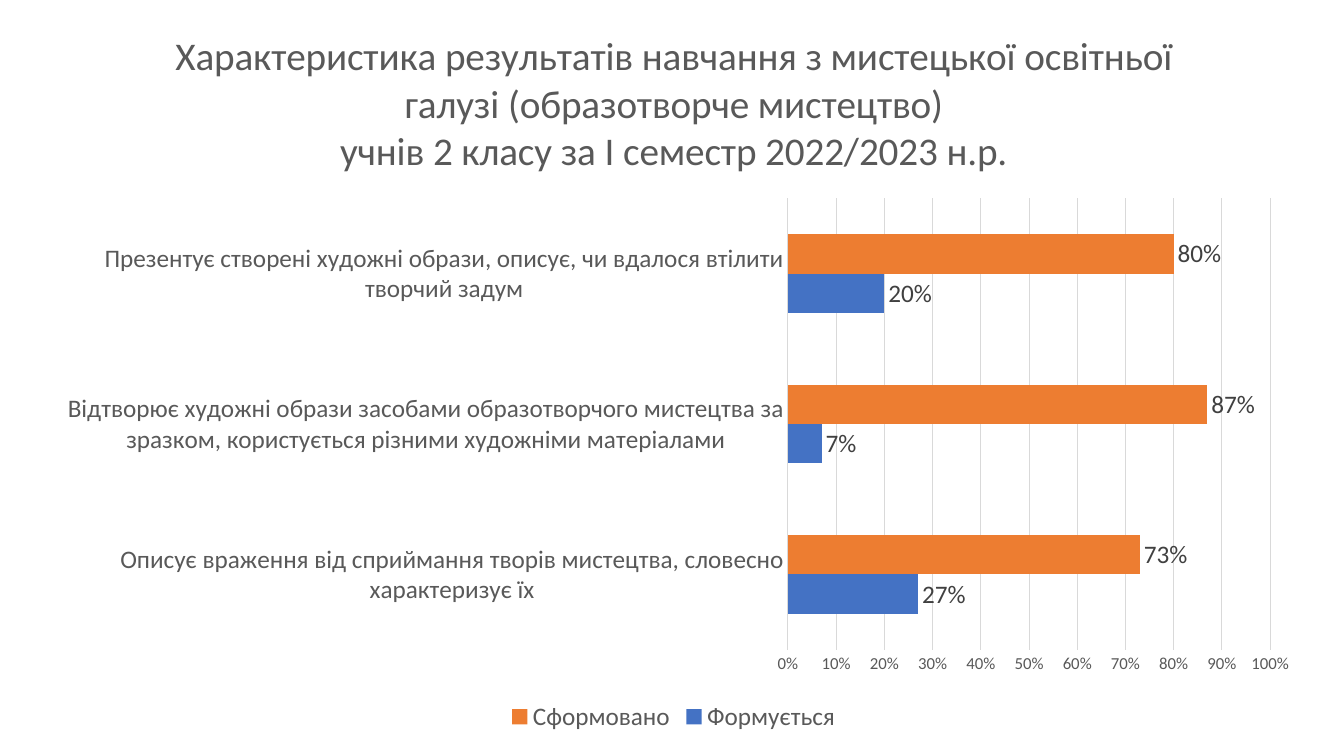
"""Build a slide with a bar chart of second-grade art learning results."""
from pptx import Presentation
from pptx.chart.data import CategoryChartData
from pptx.dml.color import RGBColor
from pptx.enum import chart as ec
from pptx.oxml import parse_xml
from pptx.oxml.ns import nsdecls
from pptx.util import Pt

COLORS = {"text": "595959", "label": "404040", "grid": "D9D9D9",
          "Формується": "4472C4", "Сформовано": "ED7D31"}
RESULTS = {"Формується": (0.27, 0.07, 0.2), "Сформовано": (0.73, 0.87, 0.8)}
TITLE = ("Характеристика результатів навчання з мистецької освітньої "
         "галузі (образотворче мистецтво)",
         "учнів 2 класу за І семестр 2022/2023 н.р.")
PLOT = {"x": 0.59, "y": 0.26, "w": 0.38, "h": 0.62}


def color(name):
    return RGBColor.from_string(COLORS[name])


def set_font(font, size, name="text"):
    font.name, font.size, font.bold = "Calibri", Pt(size), False
    font.color.rgb = color(name)


prs = Presentation()
prs.slide_width, prs.slide_height = Pt(960), Pt(540)
s = prs.slides.add_slide(prs.slide_layouts[6])

data = CategoryChartData(number_format="0%")
data.categories = (
    "Описує враження від сприймання творів мистецтва, словесно характеризує їх",
    "Відтворює художні образи засобами образотворчого мистецтва за зразком, "
    "користується різними художніми матеріалами",
    "Презентує створені художні образи, описує, чи вдалося втілити творчий задум",
)
for name, values in RESULTS.items():
    data.add_series(name, values)
chart = s.shapes.add_chart(ec.XL_CHART_TYPE.BAR_CLUSTERED, Pt(28), Pt(6.5),
                           Pt(906.5), Pt(520), data).chart
set_font(chart.font, 10)

chart.has_title = True
chart.chart_title.include_in_layout = False
tf = chart.chart_title.text_frame
tf.text = TITLE[0]
tf.add_paragraph().text = TITLE[1]
for p in tf.paragraphs:
    set_font(p.font, 28)
    for r in p.runs:
        set_font(r.font, 28)

chart.has_legend = True
chart.legend.position = ec.XL_LEGEND_POSITION.BOTTOM
chart.legend.include_in_layout = False
set_font(chart.legend.font, 18)

for axis, size in ((chart.category_axis, 18), (chart.value_axis, 12)):
    axis.major_tick_mark = axis.minor_tick_mark = ec.XL_TICK_MARK.NONE
    set_font(axis.tick_labels.font, size)
line = chart.category_axis.format.line
line.color.rgb, line.width = color("grid"), Pt(0.75)

axis = chart.value_axis
axis.minimum_scale, axis.maximum_scale, axis.major_unit = 0, 1, 0.1
axis.format.line.fill.background()
axis.tick_labels.number_format = "0%"
axis.tick_labels.number_format_is_linked = False
line = axis.major_gridlines.format.line
line.color.rgb, line.width = color("grid"), Pt(0.75)

plot = chart.plots[0]
plot.gap_width, plot.overlap, plot.vary_by_categories = 182, 0, False
for series in plot.series:
    series.format.fill.solid()
    series.format.fill.fore_color.rgb = color(series.name)
    labels = series.data_labels
    labels.show_value = True
    labels.number_format, labels.number_format_is_linked = "0%", False
    labels.position = ec.XL_LABEL_POSITION.OUTSIDE_END
    set_font(labels.font, 18, "label")

area = chart.element.chart.plotArea
for layout in area.findall("{*}layout"):
    area.remove(layout)
modes = "".join(f'<c:{k}Mode val="edge"/>' for k in "xy")
sizes = "".join(f'<c:{k} val="{v}"/>' for k, v in PLOT.items())
area.insert(0, parse_xml(
    f'<c:layout {nsdecls("c")}><c:manualLayout><c:layoutTarget val="inner"/>'
    f'{modes}{sizes}</c:manualLayout></c:layout>'))

prs.save("out.pptx")
